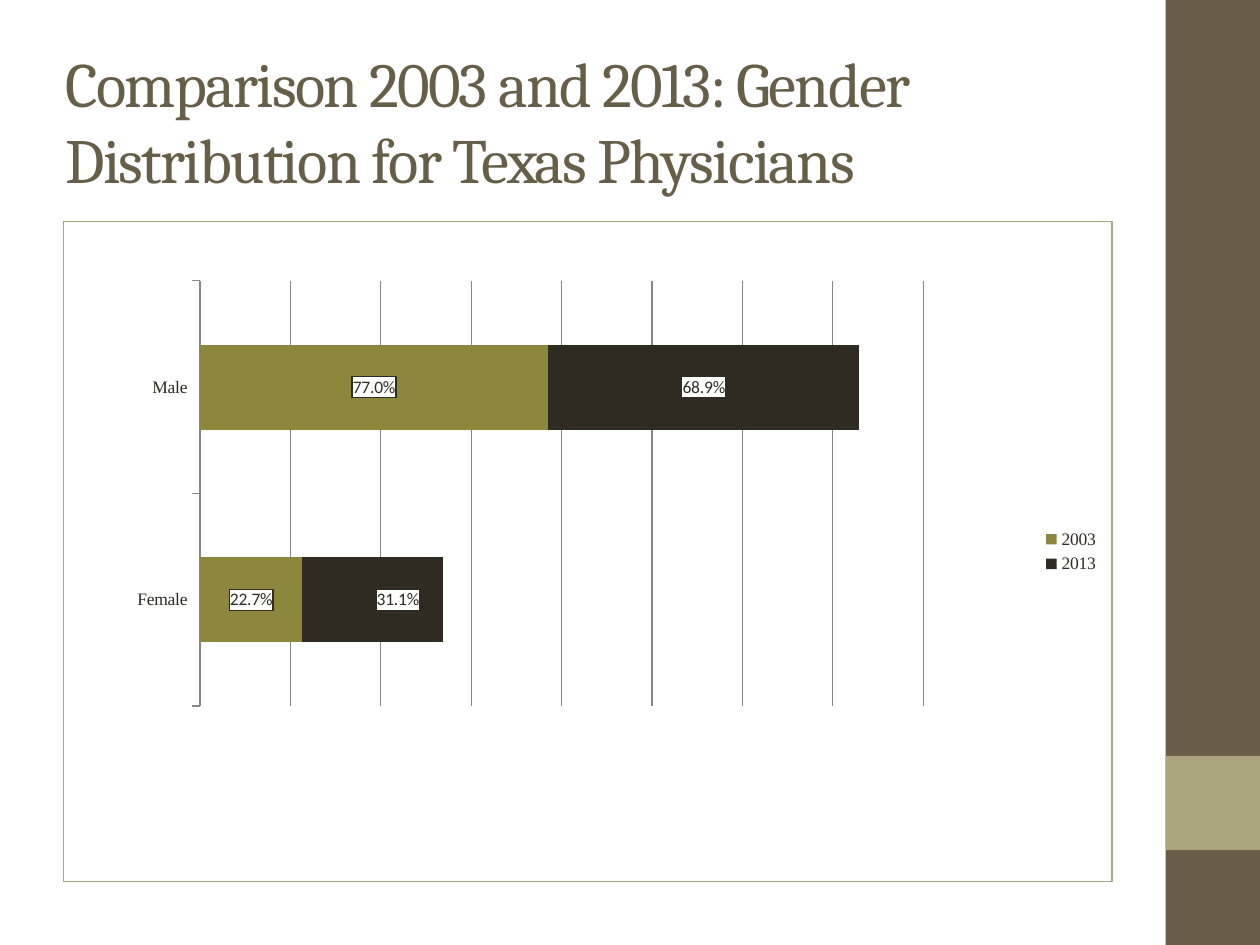
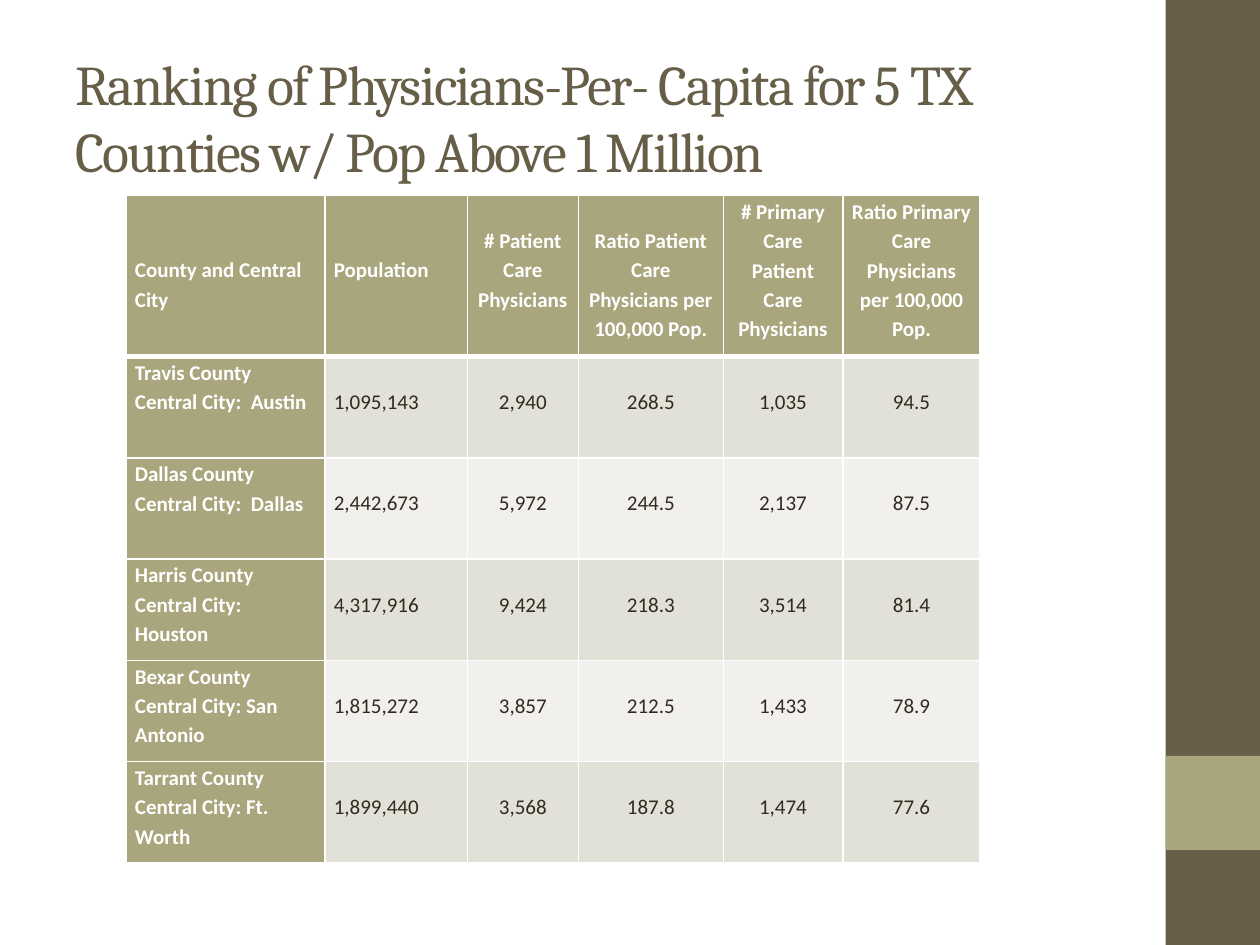
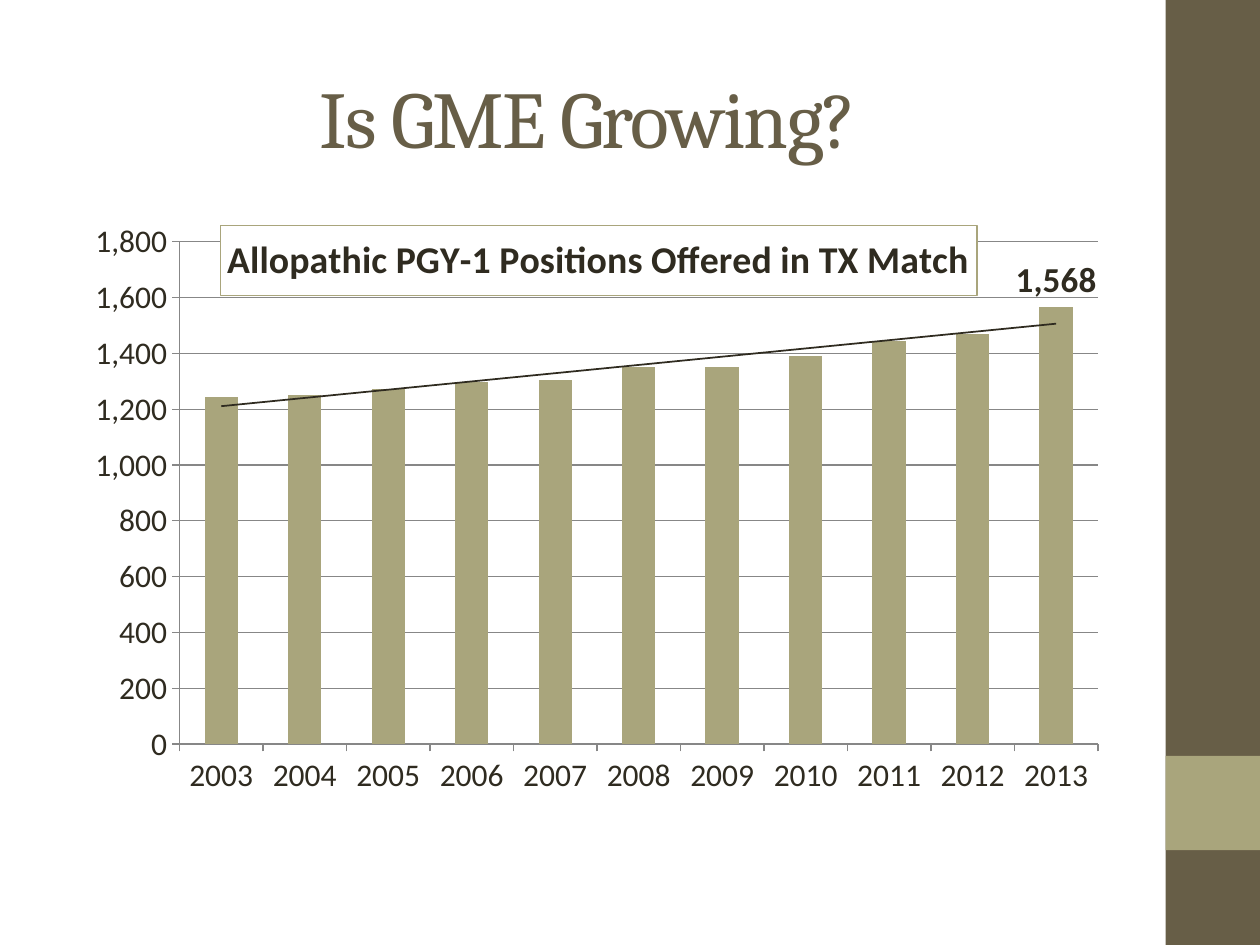
from copy import deepcopy

from pptx import Presentation
from pptx.chart.data import CategoryChartData
from pptx.dml.color import RGBColor
from pptx.enum.chart import XL_CHART_TYPE as ChartType
from pptx.enum.chart import XL_LABEL_POSITION as LabelPosition
from pptx.enum.chart import XL_LEGEND_POSITION as LegendPosition
from pptx.enum.chart import XL_TICK_MARK as TickMark
from pptx.enum.shapes import MSO_SHAPE as Shape
from pptx.enum.text import MSO_ANCHOR as Anchor
from pptx.enum.text import PP_ALIGN as Align
from pptx.oxml import parse_xml
from pptx.util import Cm, Pt

COLORS = {
    "brown": "675E47",
    "sage": "A9A57C",
    "olive": "8D873E",
    "ink": "2F2B20",
    "white": "FFFFFF",
    "band_dark": "E2E1D7",
    "band_light": "F1F0EC",
    "grid": "878787",
}
BODY, HEADING, SERIF = "Calibri", "Cambria", "Times New Roman"
CHART_BOX = (1.27, 4.45, 21.16, 13.34)
NAMESPACES = (
    'xmlns:c="http://schemas.openxmlformats.org/drawingml/2006/chart" '
    'xmlns:a="http://schemas.openxmlformats.org/drawingml/2006/main"'
)


def rgb(color):
    return RGBColor.from_string(COLORS[color])


def set_font(font, size=None, name=BODY, color="ink", bold=False):
    font.name, font.bold = name, bold
    font.color.rgb = rgb(color)
    if size:
        font.size = Pt(size)


def write_text(text_frame, text, align=None, line_spacing=None, tracking=0, **font):
    """Fill a text frame, one paragraph for each line of the text."""
    for index, line in enumerate(text.split("\n")):
        paragraph = text_frame.add_paragraph() if index else text_frame.paragraphs[0]
        paragraph.alignment = align
        paragraph.line_spacing = line_spacing
        run = paragraph.add_run()
        run.text = line
        set_font(run.font, **font)
        if tracking:
            run.font._element.set("spc", str(tracking * 100))


# XML pieces that charts and tables need
def solid(color):
    return f'<a:solidFill><a:srgbClr val="{COLORS[color]}"/></a:solidFill>'


def outline(color, points, tag="a:ln", namespaces=""):
    return f'<{tag} {namespaces} w="{round(points * 12700)}">{solid(color)}</{tag}>'


def shape_properties(line, points, fill="white"):
    return parse_xml(f"<c:spPr {NAMESPACES}>{solid(fill)}{outline(line, points)}</c:spPr>")


def manual_layout(x, y, width=None, height=None):
    inner = width is not None
    target = '<c:layoutTarget val="inner"/>' if inner else ""
    modes = '<c:xMode val="edge"/><c:yMode val="edge"/>' if inner else ""
    size = f'<c:w val="{width}"/><c:h val="{height}"/>' if inner else ""
    return parse_xml(
        f"<c:layout {NAMESPACES}><c:manualLayout>{target}{modes}"
        f'<c:x val="{x}"/><c:y val="{y}"/>{size}</c:manualLayout></c:layout>'
    )


class Deck:
    def __init__(self):
        self.presentation = Presentation()
        self.presentation.slide_width = Cm(25.4)
        self.presentation.slide_height = Cm(19.05)
        self.slide = None

    def new_slide(self, title, left=1.27, top=0.76, size=36, align=None):
        self.slide = self.presentation.slides.add_slide(self.presentation.slide_layouts[6])
        self.band(0, 19.05, "brown")
        self.band(15.24, 1.9, "sage")
        box = self.slide.shapes.add_textbox(Cm(left), Cm(top), Cm(21.16), Cm(3.18))
        box.text_frame.word_wrap = True
        box.text_frame.vertical_anchor = Anchor.MIDDLE
        write_text(box.text_frame, title, align=align, tracking=-1,
                   size=size, name=HEADING, color="brown")

    def band(self, top, height, color):
        shape = self.slide.shapes.add_shape(
            Shape.RECTANGLE, Cm(23.5), Cm(top), Cm(1.9), Cm(height))
        shape.shadow.inherit = False
        shape.fill.solid()
        shape.fill.fore_color.rgb = rgb(color)
        shape.line.fill.background()

    def bar_chart(self, chart_type, categories, series, colors, number_format, size, plot):
        data = CategoryChartData(number_format=number_format)
        data.categories = categories
        for name, values in series.items():
            data.add_series(name, values)
        box = [Cm(length) for length in CHART_BOX]
        chart = self.slide.shapes.add_chart(chart_type, *box, data).chart
        set_font(chart.font, size)
        chart.has_title = chart.has_legend = False
        chart.plots[0].gap_width = 150
        chart.plots[0].vary_by_categories = False
        for item, color in zip(chart.plots[0].series, colors):
            item.format.fill.solid()
            item.format.fill.fore_color.rgb = rgb(color)

        # Axes and gridlines
        chart.value_axis.has_major_gridlines = True
        chart.value_axis.minimum_scale = 0
        chart.value_axis.tick_labels.number_format = number_format
        chart.value_axis.tick_labels.number_format_is_linked = False
        for axis in (chart.category_axis, chart.value_axis):
            axis.major_tick_mark = TickMark.OUTSIDE
            axis.minor_tick_mark = TickMark.NONE
        for line in (chart.category_axis.format.line, chart.value_axis.format.line,
                     chart.value_axis.major_gridlines.format.line):
            line.color.rgb = rgb("grid")
            line.width = Pt(0.75)

        # Plot area
        area = chart.element.xpath("c:chart/c:plotArea")[0]
        for layout in area.xpath("c:layout"):
            area.remove(layout)
        area.insert(0, manual_layout(*plot))
        return chart

    def table(self, left, top, widths, heights, rows):
        frame = self.slide.shapes.add_table(
            len(rows), len(widths), Cm(left), Cm(top), Cm(sum(widths)), Cm(sum(heights)))
        table = frame.table
        for column, width in zip(table.columns, widths):
            column.width = Cm(width)
        for row, height in zip(table.rows, heights):
            row.height = Cm(height)
        for row_index, row in enumerate(rows):
            for column_index, (text, lines_above) in enumerate(row):
                self.cell(table.cell(row_index, column_index), text, lines_above,
                          row_index, column_index)

    def cell(self, cell, text, lines_above, row, column):
        is_heading = row == 0 or column == 0
        band = "band_dark" if row % 2 else "band_light"
        cell.fill.solid()
        cell.fill.fore_color.rgb = rgb("sage" if is_heading else band)
        cell.margin_left = cell.margin_right = Cm(0.18)
        cell.margin_top, cell.margin_bottom = Cm(0.59 * lines_above), 0
        write_text(cell.text_frame, text, size=12, bold=is_heading, line_spacing=1.15,
                   color="white" if is_heading else "ink",
                   align=Align.CENTER if column > 1 else Align.LEFT)
        borders = {"L": 1, "R": 1, "T": 3 if row == 1 else 1, "B": 3 if row == 0 else 1}
        properties = cell._tc.get_or_add_tcPr()
        for index, (side, points) in enumerate(borders.items()):
            border = outline("white", points, f"a:ln{side}", NAMESPACES)
            properties.insert(index, parse_xml(border))


def gender_slide(deck):
    deck.new_slide("Comparison 2003 and 2013: Gender Distribution for Texas Physicians",
                   left=1.07, top=0.84)
    chart = deck.bar_chart(
        ChartType.BAR_STACKED, ["Female", "Male"],
        {"2003": (0.227, 0.77), "2013": (0.311, 0.689)},
        ["olive", "ink"], "0.0%", 10, (0.13, 0.09, 0.69, 0.644))
    chart.plots[0].overlap = 100
    chart.value_axis.maximum_scale = 1.6
    chart.value_axis.major_unit = 0.2
    chart.value_axis.visible = False
    set_font(chart.category_axis.tick_labels.font, 10, SERIF)
    chart.has_legend = True
    chart.legend.position = LegendPosition.RIGHT
    chart.legend.include_in_layout = False
    set_font(chart.legend.font, 10, SERIF)
    chart.element.xpath("c:chart")[0].addnext(shape_properties("sage", 0.75))

    # Boxed value labels
    for series in chart.plots[0].series:
        labels = series.data_labels
        labels.show_value = True
        labels.number_format, labels.number_format_is_linked = "0.0%", False
        labels.position = LabelPosition.CENTER
        set_font(labels.font, 10)
    for number_format in chart.element.xpath(".//c:ser/c:dLbls/c:numFmt"):
        number_format.addnext(shape_properties("ink", 0.75))

    # The 2013 label for women sits right of the middle of its bar
    chart.plots[0].series[1].points[0].data_label.position = LabelPosition.CENTER
    label = chart.element.xpath(".//c:dLbl")[0]
    shared = label.getparent().xpath("c:numFmt | c:spPr | c:txPr")
    for old in label.xpath("c:numFmt | c:spPr | c:txPr"):
        label.remove(old)
    parts = [manual_layout(0.024, 0)] + [deepcopy(part) for part in shared]
    for index, part in enumerate(parts, start=1):
        label.insert(index, part)


def ranking_slide(deck):
    deck.new_slide("Ranking of Physicians-Per- Capita for 5 TX Counties w/ Pop Above 1 Million",
                   size=32)
    # Each cell is its text and the number of lines left free above it
    header = [
        ("County and Central City", 2),
        ("Population", 2),
        ("# Patient\nCare\nPhysicians", 1),
        ("Ratio Patient Care Physicians per 100,000 Pop.", 1),
        ("# Primary Care\nPatient Care Physicians", 0),
        ("Ratio Primary Care Physicians per 100,000 Pop.", 0),
    ]
    counties = [
        ("Travis County\nCentral City:  Austin", "1,095,143", "2,940", "268.5", "1,035", "94.5"),
        ("Dallas County\nCentral City:  Dallas", "2,442,673", "5,972", "244.5", "2,137", "87.5"),
        ("Harris County\nCentral City: Houston", "4,317,916", "9,424", "218.3", "3,514", "81.4"),
        ("Bexar County\nCentral City: San Antonio", "1,815,272", "3,857", "212.5", "1,433", "78.9"),
        ("Tarrant County\nCentral City: Ft. Worth", "1,899,440", "3,568", "187.8", "1,474", "77.6"),
    ]
    body = [[(text, min(column, 1)) for column, text in enumerate(county)]
            for county in counties]
    deck.table(2.54, 3.94, [4.01, 2.87, 2.24, 2.92, 2.41, 2.77],
               [3.25] + [2.04] * len(body), [header] + body)


def growth_slide(deck):
    deck.new_slide("Is GME Growing?", size=46, align=Align.CENTER)
    name = "Allopathic PGY-1 Positions Offered in TX Match"
    positions = (1244, 1250, 1273, 1296, 1306, 1352, 1351, 1390, 1445, 1471, 1568)
    chart = deck.bar_chart(
        ChartType.COLUMN_CLUSTERED, [str(year) for year in range(2003, 2014)],
        {name: positions}, ["sage"], "#,##0", 18, (0.111, 0.032, 0.875, 0.759))
    chart.value_axis.maximum_scale = 1800
    chart.value_axis.major_unit = 200

    # Boxed title over the plot
    chart.has_title = True
    title = chart.chart_title
    write_text(title.text_frame, name, size=21.6, bold=True)
    title.include_in_layout = True
    title.format.fill.solid()
    title.format.fill.fore_color.rgb = rgb("white")
    title.format.line.color.rgb = rgb("sage")
    title.format.line.width = Pt(0.75)
    element = chart.element.xpath("c:chart/c:title")[0]
    for layout in element.xpath("c:layout"):
        element.remove(layout)
    place = manual_layout(0.15, 0.007)
    for axis in ("y", "x"):
        place[0].insert(0, parse_xml(f'<c:{axis}Mode {NAMESPACES} val="edge"/>'))
    element.xpath("c:tx")[0].addnext(place)

    # Label on the last column only
    series = chart.plots[0].series[0]
    series.data_labels.show_value = False
    label = series.points[len(positions) - 1].data_label
    set_font(label.font, 20, bold=True)
    label.position = LabelPosition.OUTSIDE_END

    # Trend line
    chart.element.xpath(".//c:ser/c:cat")[0].addprevious(parse_xml(
        f"<c:trendline {NAMESPACES}><c:spPr>{outline('ink', 1)}</c:spPr>"
        '<c:trendlineType val="linear"/><c:dispRSqr val="0"/><c:dispEq val="0"/>'
        "</c:trendline>"))


def main():
    deck = Deck()
    gender_slide(deck)
    ranking_slide(deck)
    growth_slide(deck)
    deck.presentation.save("out.pptx")


if __name__ == "__main__":
    main()
